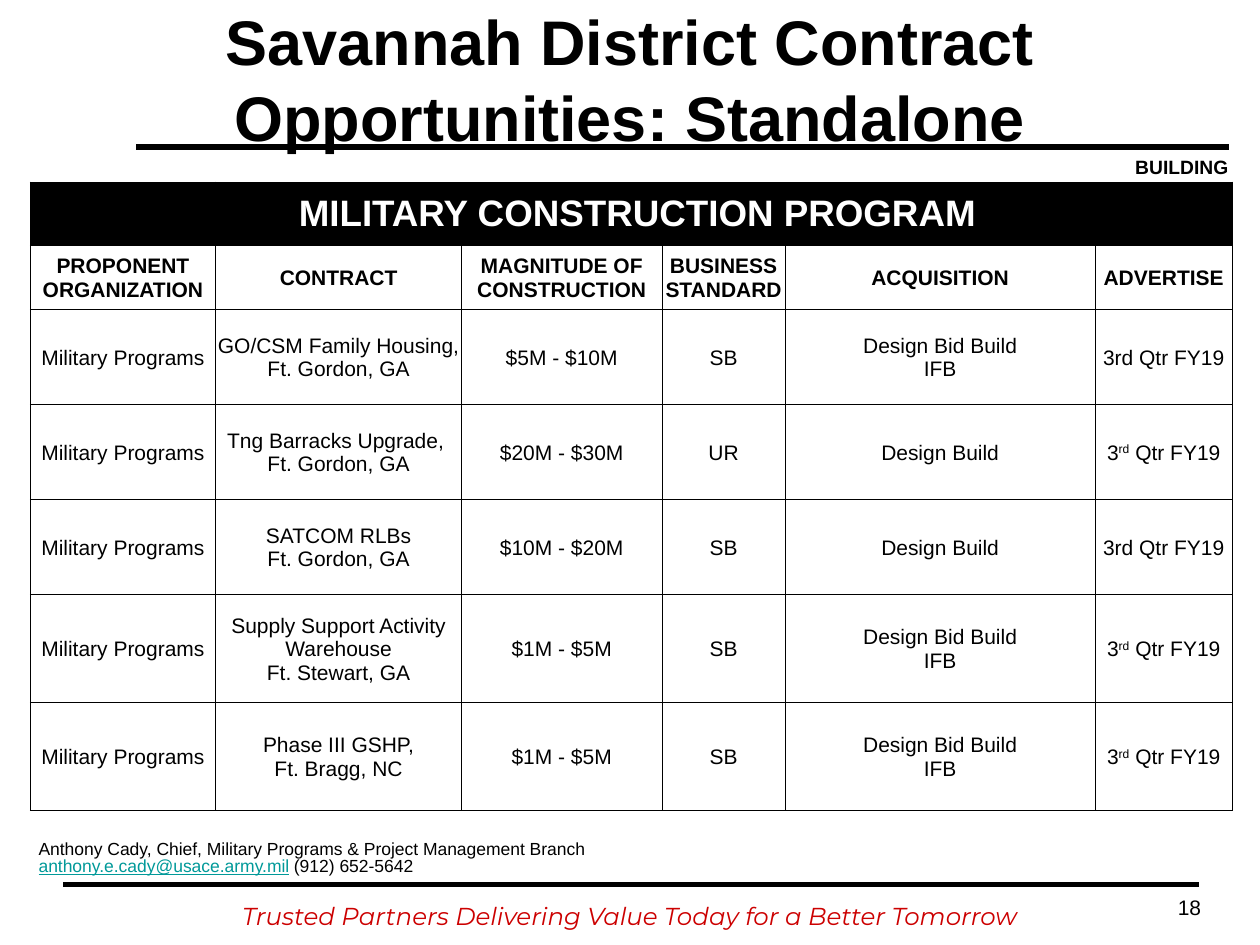
from dataclasses import dataclass

from lxml.etree import SubElement
from pptx import Presentation
from pptx.dml.color import RGBColor as RGB
from pptx.enum.shapes import MSO_CONNECTOR as CONN
from pptx.enum.text import MSO_ANCHOR as ANCHOR, MSO_AUTO_SIZE as AUTO, PP_ALIGN as ALIGN
from pptx.oxml.ns import qn
from pptx.util import Pt


@dataclass(frozen=True)
class Theme:
    black: RGB = RGB(0, 0, 0)
    white: RGB = RGB(255, 255, 255)
    red: RGB = RGB(0xCC, 0, 0)
    teal: RGB = RGB(0, 0x99, 0x99)
    font: str = "Arial"
    slogan_font: str = "Montserrat"
    title: int = 36
    banner: int = 21
    slogan: int = 14
    cell: int = 12
    tag: int = 11
    contact: int = 10
    rule: float = 3
    border: float = 0.5


T = Theme()
COLUMNS = [106, 140.5, 114.5, 70.5, 177, 78.5]
ROWS = [36, 37, 54.3, 54.3, 54.3, 61.7, 61.7]
BANNER = "MILITARY CONSTRUCTION PROGRAM"
BANNER_INDENT = 47.5
HEADINGS = ["PROPONENT ORGANIZATION", "CONTRACT", "MAGNITUDE OF CONSTRUCTION",
            "BUSINESS STANDARD", "ACQUISITION", "ADVERTISE"]
PROPONENT = "Military Programs"
BID_BUILD = "Design Bid Build\nIFB"
QUARTER = "3rd Qtr FY19"
RAISED = [("3", {}), ("rd", {"raised": True}), (" Qtr FY19", {})]
CONTRACTS = [
    ["GO/CSM Family Housing,\nFt. Gordon, GA", "$5M - $10M", "SB", BID_BUILD, QUARTER],
    ["Tng Barracks Upgrade, \nFt. Gordon, GA", "$20M - $30M", "UR", "Design Build", RAISED],
    ["SATCOM RLBs\nFt. Gordon, GA", "$10M - $20M", "SB", "Design Build", QUARTER],
    ["Supply Support Activity Warehouse\nFt. Stewart, GA", "$1M - $5M", "SB", BID_BUILD, RAISED],
    ["Phase III GSHP,\nFt. Bragg, NC", "$1M - $5M", "SB", BID_BUILD, RAISED],
]


def add_run(p, text, size, color=T.black, raised=False, **fmt):
    r = p.add_run()
    r.text = text
    for name, value in {"name": T.font, "size": Pt(size), "bold": False, **fmt}.items():
        setattr(r.font, name, value)
    r.font.color.rgb = color
    if raised:
        r.font._element.set("baseline", "30000")


def write(tf, content, size, align=ALIGN.LEFT, spacing=None, **fmt):
    """Fill a text frame from a string, with one paragraph a line, or from (text, format) runs."""
    if isinstance(content, str):
        lines = [[(line, {})] for line in content.split("\n")]
    else:
        lines = [content]
    for i, runs in enumerate(lines):
        p = tf.add_paragraph() if i else tf.paragraphs[0]
        p.alignment = align
        if spacing:
            p.line_spacing = spacing
        for text, extra in runs:
            add_run(p, text, size, **{**fmt, **extra})


def set_margins(obj, left, top, right, bottom):
    for side, value in {"left": left, "top": top, "right": right, "bottom": bottom}.items():
        setattr(obj, f"margin_{side}", Pt(value))


def add_text_box(slide, box, inset=(7.2, 3.6)):
    tf = slide.shapes.add_textbox(*map(Pt, box)).text_frame
    tf.word_wrap = True
    set_margins(tf, *inset, *inset)
    return tf


def add_rule(slide, left, right, y):
    line = slide.shapes.add_connector(CONN.STRAIGHT, Pt(left), Pt(y), Pt(right), Pt(y))
    line.line.color.rgb = T.black
    line.line.width = Pt(T.rule)
    SubElement(line._element.spPr, qn("a:effectLst"))


def add_header(slide, left, top, width, height):
    """Title, the rule below it and the tag at its right end."""
    title = slide.shapes.title
    for name, value in zip(("left", "top", "width", "height"), (left, top, width, height)):
        setattr(title, name, Pt(value))
    tf = title.text_frame
    tf.auto_size, tf.word_wrap, tf.vertical_anchor = AUTO.NONE, True, ANCHOR.MIDDLE
    write(tf, "Savannah District Contract Opportunities: Standalone", T.title,
          ALIGN.CENTER, bold=True)
    right = left + width + 18
    rule_y = top + height + 18.5
    add_rule(slide, left + 42, right, rule_y)
    tag = add_text_box(slide, (right - 104, rule_y + 4.5, 104, 13.5), inset=(0, 0))
    write(tag, "BUILDING", T.tag, ALIGN.RIGHT, bold=True)


def set_borders(cell):
    tc_pr = cell._tc.get_or_add_tcPr()
    for i, side in enumerate(("lnL", "lnR", "lnT", "lnB")):
        ln = tc_pr.makeelement(qn(f"a:{side}"), {"w": str(Pt(T.border))})
        fill = SubElement(ln, qn("a:solidFill"))
        SubElement(fill, qn("a:srgbClr"), val=str(T.black))
        tc_pr.insert(i, ln)


def add_contract_table(slide, left, top):
    frame = slide.shapes.add_table(len(ROWS), len(COLUMNS), Pt(left), Pt(top),
                                   Pt(sum(COLUMNS)), Pt(sum(ROWS)))
    table = frame.table
    for column, width in zip(table.columns, COLUMNS):
        column.width = Pt(width)
    for row, height in zip(table.rows, ROWS):
        row.height = Pt(height)

    for i, row in enumerate(table.rows):
        for cell in row.cells:
            cell.fill.solid()
            cell.fill.fore_color.rgb = T.white if i else T.black
            cell.vertical_anchor = ANCHOR.MIDDLE
            set_margins(cell, 0.72, 0.72, 0.72, 0)
            set_borders(cell)

    banner = table.cell(0, 1)
    banner.merge(table.cell(0, len(COLUMNS) - 1))
    banner.margin_left = Pt(BANNER_INDENT)
    write(banner.text_frame, BANNER, T.banner, color=T.white, bold=True)

    body = [HEADINGS] + [[PROPONENT, *contract] for contract in CONTRACTS]
    for i, values in enumerate(body, start=1):
        for j, value in enumerate(values):
            write(table.cell(i, j).text_frame, value, T.cell, ALIGN.CENTER, bold=i == 1)


def add_contact(slide, left, top, width, height):
    tf = add_text_box(slide, (left, top, width, height))
    write(tf, "Anthony Cady, Chief, Military Programs & Project Management Branch",
          T.contact, spacing=0.8)
    p = tf.add_paragraph()
    p.line_spacing = 0.8
    add_run(p, "anthony.e.cady@usace.army.mil", T.contact, T.teal, underline=True)
    add_run(p, " (912) 652-5642", T.contact)


def add_footer(slide, left, top, width):
    """Rule, slogan and page number."""
    add_rule(slide, left + 36, left + width - 35, top)
    slogan = add_text_box(slide, (left, top + 10, width, 16), inset=(0, 0))
    write(slogan, "Trusted Partners Delivering Value Today for a Better Tomorrow", T.slogan,
          ALIGN.CENTER, spacing=Pt(16), name=T.slogan_font, color=T.red, italic=True)
    number = add_text_box(slide, (left + width - 57, top + 2.2, 30.5, 22))
    write(number, "18", T.cell, ALIGN.RIGHT)


def main():
    prs = Presentation()
    prs.slide_width, prs.slide_height = Pt(720), Pt(540)
    slide = prs.slides.add_slide(prs.slide_layouts[5])
    add_header(slide, 36, 24, 648, 41.5)
    add_contract_table(slide, 17.3, 104)
    add_contact(slide, 15, 477.5, 687, 26.5)
    add_footer(slide, 0, 505.5, 720)
    prs.save("out.pptx")


if __name__ == "__main__":
    main()
